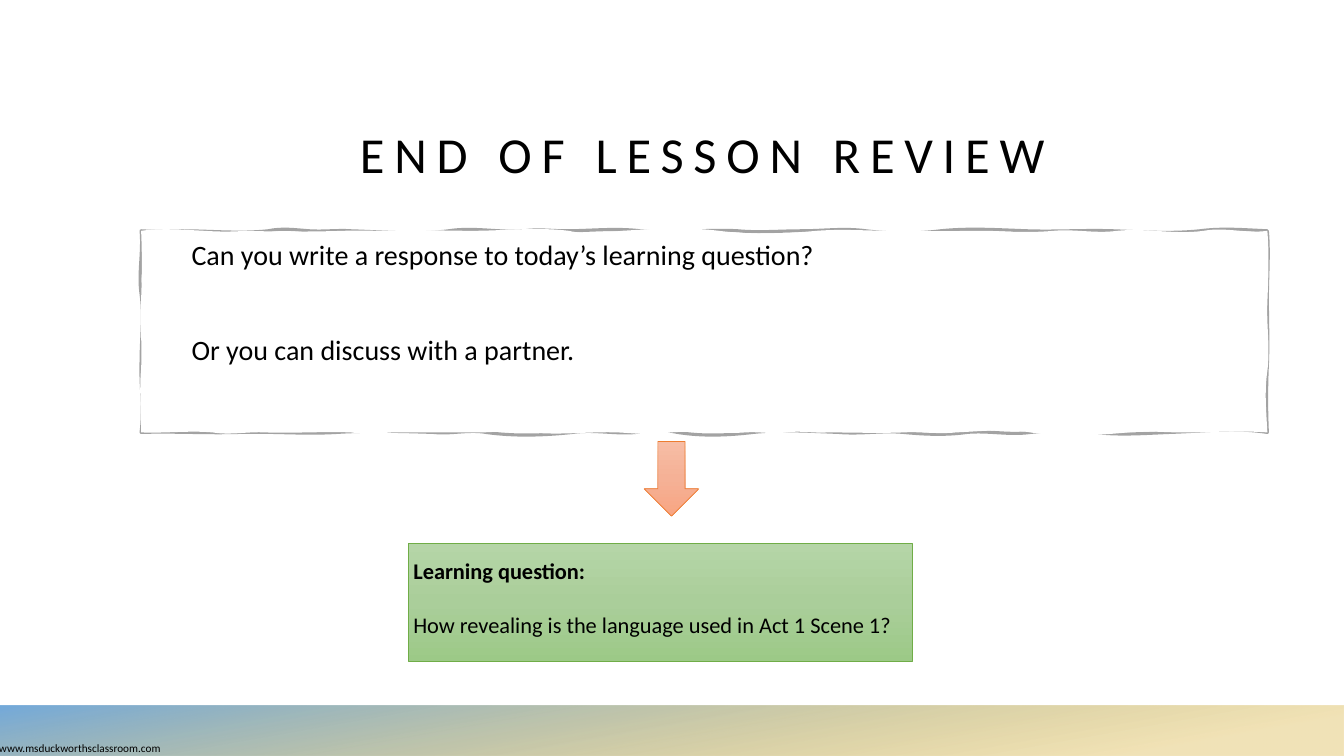
from lxml import etree
from pptx import Presentation
from pptx.dml.color import RGBColor
from pptx.enum.shapes import MSO_SHAPE
from pptx.enum.text import MSO_ANCHOR, PP_ALIGN
from pptx.oxml import parse_xml
from pptx.oxml.ns import nsdecls, qn
from pptx.util import Pt

PX = 9144  # EMU per px, 100 px to the inch
RECT, DOWN_ARROW = MSO_SHAPE.RECTANGLE, MSO_SHAPE.DOWN_ARROW
TOP, BOTTOM = MSO_ANCHOR.TOP, MSO_ANCHOR.BOTTOM
LEFT, CENTER = PP_ALIGN.LEFT, PP_ALIGN.CENTER
BLACK = RGBColor(0x00, 0x00, 0x00)
WHITE = RGBColor(0xFF, 0xFF, 0xFF)
GREY = RGBColor(0xA3, 0xA3, 0xA3)
ORANGE = RGBColor(0xED, 0x7D, 0x31)
GREEN = RGBColor(0x70, 0xAD, 0x47)
GOLD = RGBColor(0xCF, 0x9B, 0x00)
BLUE = RGBColor(0x5B, 0x9B, 0xD5)
ORANGE_TINTS = [RGBColor(0xF7, 0xBD, 0xA5), RGBColor(0xF5, 0xB1, 0x96), RGBColor(0xF8, 0xA5, 0x82)]
GREEN_TINTS = [RGBColor(0xB5, 0xD5, 0xA7), RGBColor(0xAA, 0xCE, 0x9A), RGBColor(0x9C, 0xC9, 0x87)]


def set_gradient(shape, stops, angle):
    """Stops are (position %, colour, opacity %)."""
    shape.fill.background()
    gradient = parse_xml(f'<a:gradFill {nsdecls("a")} rotWithShape="1"><a:gsLst/>'
                         f'<a:lin ang="{angle * 60000}" scaled="0"/></a:gradFill>')
    for position, colour, opacity in stops:
        stop = etree.SubElement(gradient[0], qn("a:gs"), pos=str(position * 1000))
        rgb = etree.SubElement(stop, qn("a:srgbClr"), val=str(colour))
        if opacity < 100:
            etree.SubElement(rgb, qn("a:alpha"), val=str(opacity * 1000))
    no_fill = shape._element.spPr.find(qn("a:noFill"))
    no_fill.getparent().replace(no_fill, gradient)


def write_lines(shape, lines, size, anchor=TOP, align=LEFT, inset=0, spacing=1.0, gap=0):
    """Lines are (text, bold); gap is the space in points between them."""
    frame = shape.text_frame
    frame.word_wrap = True
    frame.vertical_anchor = anchor
    frame.margin_left = inset * PX
    frame.margin_right = frame.margin_top = frame.margin_bottom = 0
    for number, (text, bold) in enumerate(lines):
        paragraph = frame.add_paragraph() if number else frame.paragraphs[0]
        paragraph.alignment = align
        paragraph.line_spacing = spacing
        paragraph.space_before = Pt(gap if number else 0)
        run = paragraph.add_run()
        run.text = text
        run.font.name = "Calibri"
        run.font.size = Pt(size)
        run.font.bold = bold
        run.font.color.rgb = BLACK


prs = Presentation()
prs.slide_width, prs.slide_height = 1333 * PX, 750 * PX
slide = prs.slides.add_slide(prs.slide_layouts[6])
shapes = slide.shapes

# Footer band and web address
band = shapes.add_shape(RECT, 0, 700 * PX, 1333 * PX, 50 * PX)
band.shadow.inherit = False
band.line.fill.background()
band.rotation = 180
band._element.spPr.find(qn("a:xfrm")).set("flipH", "1")
set_gradient(band, [(14, GOLD, 28), (100, BLUE, 85)], 100)

address = shapes.add_textbox(-10 * PX, 729 * PX, 200 * PX, 24 * PX)
write_lines(address, [("www.msduckworthsclassroom.com", False)], 8, inset=9)
address.text_frame.margin_top = 6 * PX

# Title
title = shapes.add_shape(RECT, 137 * PX, 48 * PX, 1120 * PX, 134 * PX)
title.shadow.inherit = False
title.fill.solid()
title.fill.fore_color.rgb = WHITE
title.line.fill.background()
write_lines(title, [("END OF LESSON REVIEW", False)], 36, BOTTOM, CENTER)
title.text_frame.paragraphs[0].runs[0].font._element.set("spc", "700")

# Hand-drawn frame: one shape with a stroked outline under a filled sheet.
# Each edge lists curves as (end along the edge, first bend, second bend).
FRAME_LEFT, FRAME_TOP, FRAME_RIGHT, FRAME_BOTTOM = 140, 229, 1257, 429
outline_edges = [
    [(181, 1, 0), (266, 0, 3), (307, -3, -1), (348, 1, -1), (445, 1, 4), (520, -4, 2),
     (561, -2, 0), (635, 0, -3), (732, 3, -2), (795, 2, 0), (859, 0, -3), (933, 3, 3),
     (1019, -3, -1), (1104, 1, -1), (1190, 1, 3), (1257, -3, -1)],
    [(296, 2, 0), (362, 0, 1), (429, -1, -1)],
    [(1160, -5, -1), (1086, 1, 3), (1022, -2, -2), (959, 3, -2), (896, 3, 2), (832, -2, 2),
     (747, -1, -3), (672, 3, 4), (631, -3, -2), (568, 2, -3), (482, 3, 4), (430, -3, 2),
     (334, -1, -2), (237, 2, -1), (140, 1, -1)],
    [(358, 3, -1), (292, 0, 3), (229, -3, 2)],
]
sheet_edges = [
    [(203, -3, -1), (244, 1, 1), (341, 1, 1), (404, -1, 1), (468, -1, 0), (564, 0, -4),
     (617, 4, 2), (713, -2, -4), (810, 4, 3), (885, -2, 0), (981, 1, 0), (1045, 1, 2),
     (1108, -2, 3), (1194, -3, 4), (1257, -4, 3)],
    [(300, 2, 1), (368, -1, 3), (429, -3, -1)],
    [(1171, -2, 0), (1119, 0, -2), (1022, 3, 5), (948, -4, -1), (896, 2, -1), (821, 1, 0),
     (780, 1, -2), (739, 2, -1), (665, 2, -2), (613, 3, 1), (527, -1, 3), (475, -3, 0),
     (389, 0, 0), (348, 1, 2), (263, -1, 1), (211, -1, 3), (140, -2, 1)],
    [(366, 0, -2), (296, 1, -1), (229, 1, 1)],
]
builder = shapes.build_freeform(FRAME_LEFT, FRAME_TOP, scale=PX)
builder.add_line_segments([(FRAME_RIGHT, FRAME_TOP), (FRAME_RIGHT, FRAME_BOTTOM),
                           (FRAME_LEFT, FRAME_BOTTOM)], close=True)
frame = builder.convert_to_shape()
frame.shadow.inherit = False
frame.fill.solid()
frame.fill.fore_color.rgb = WHITE
frame.line.color.rgb = GREY
frame.line.width = Pt(2.25)

contours = frame._element.spPr.find(qn("a:custGeom")).find(qn("a:pathLst"))
contours.remove(contours[0])
edge_starts = (FRAME_LEFT, FRAME_TOP, FRAME_RIGHT, FRAME_BOTTOM)
edge_levels = (FRAME_TOP, FRAME_RIGHT, FRAME_BOTTOM, FRAME_LEFT)
for edges, setting in ((outline_edges, {"fill": "none"}), (sheet_edges, {"stroke": "0"})):
    contour = etree.SubElement(contours, qn("a:path"), w=str((FRAME_RIGHT - FRAME_LEFT) * PX),
                               h=str((FRAME_BOTTOM - FRAME_TOP) * PX), **setting)
    move = etree.SubElement(contour, qn("a:moveTo"))
    etree.SubElement(move, qn("a:pt"), x="0", y="0")
    for side, (curves, start, level) in enumerate(zip(edges, edge_starts, edge_levels)):
        for end, bend_1, bend_2 in curves:
            curve = etree.SubElement(contour, qn("a:cubicBezTo"))
            for third, bend in ((1, bend_1), (2, bend_2), (3, 0)):
                along, across = start + (end - start) * third / 3, level + bend
                x, y = (across, along) if side % 2 else (along, across)
                etree.SubElement(curve, qn("a:pt"), x=str(round((x - FRAME_LEFT) * PX)),
                                 y=str(round((y - FRAME_TOP) * PX)))
            start = end
    etree.SubElement(contour, qn("a:close"))

write_lines(frame, [("Can you write a response to today’s learning question?", False),
                    ("Or you can discuss with a partner.", False)],
            20, inset=50, spacing=1.2, gap=39)

# Arrow down to the learning question
arrow = shapes.add_shape(DOWN_ARROW, 639 * PX, 438 * PX, 54 * PX, 74 * PX)
question = shapes.add_shape(RECT, 405 * PX, 539 * PX, 500 * PX, 117 * PX)
for shape, tints, edge_colour in ((arrow, ORANGE_TINTS, ORANGE), (question, GREEN_TINTS, GREEN)):
    shape.shadow.inherit = False
    shape.line.color.rgb = edge_colour
    shape.line.width = Pt(0.5)
    set_gradient(shape, [(50 * i, tint, 100) for i, tint in enumerate(tints)], 90)
write_lines(question, [("Learning question:", True),
                       ("How revealing is the language used in Act 1 Scene 1?", False)],
            16, inset=5, spacing=1.5, gap=10)

prs.save("out.pptx")
